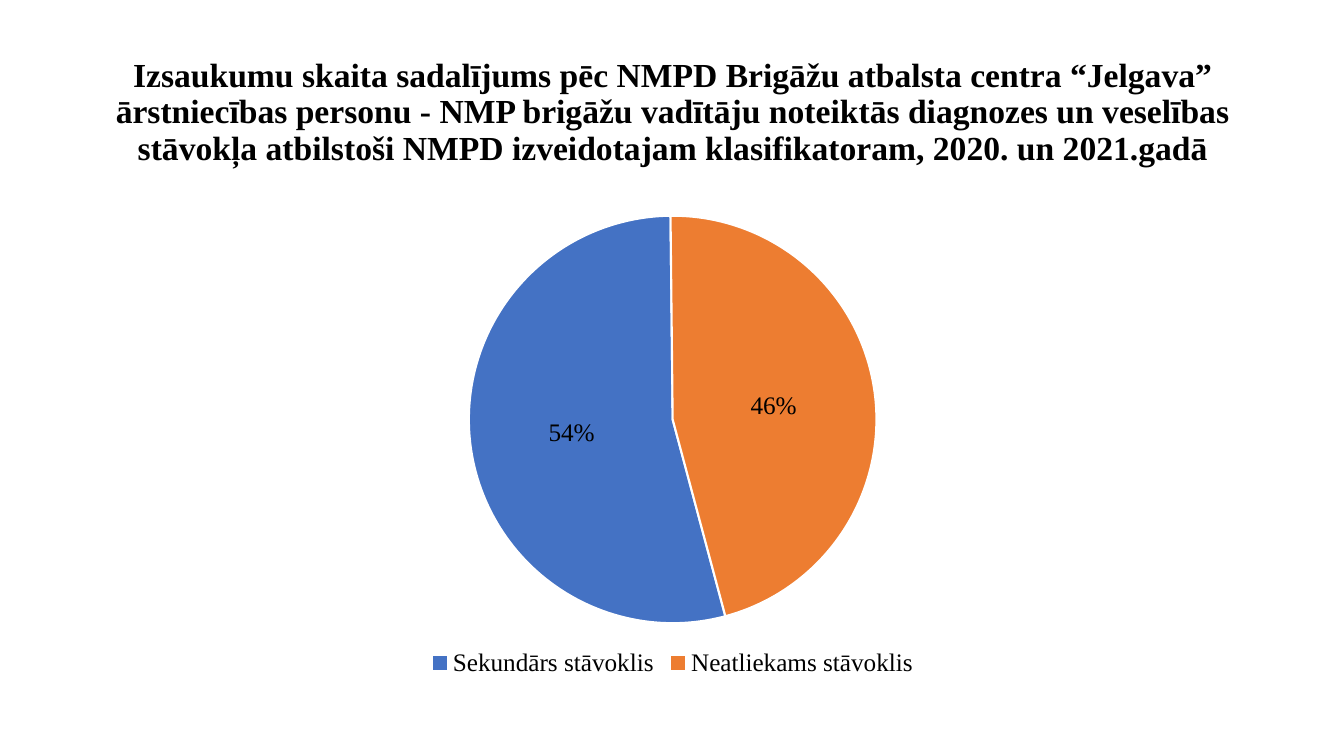
"""Build a slide with a title and a pie chart of emergency calls by condition."""
from dataclasses import dataclass

from pptx import Presentation
from pptx import util as u
from pptx.chart.data import CategoryChartData
from pptx.dml.color import RGBColor
from pptx.enum import chart as charts, text

WIDTH, HEIGHT = u.Inches(13.33), u.Inches(7.5)
COLORS = {"text": "000000", "edge": "FFFFFF", "secondary": "4472C4", "urgent": "ED7D31"}
FONT = {"name": "Times New Roman", "size": u.Pt(18), "bold": False}
TITLE_FONT = FONT | {"size": u.Pt(24), "bold": True}
TITLE = (
    "Izsaukumu skaita sadalījums pēc NMPD Brigāžu atbalsta centra “Jelgava” "
    "ārstniecības personu - NMP brigāžu vadītāju noteiktās diagnozes un veselības "
    "stāvokļa atbilstoši NMPD izveidotajam klasifikatoram, 2020. un 2021.gadā"
)


@dataclass(frozen=True)
class Area:
    """Place on the slide, in shares of its width and height."""

    left: float
    top: float
    width: float
    height: float

    def box(self) -> tuple[int, int, int, int]:
        """Return left, top, width and height in slide units."""
        return (int(self.left * WIDTH), int(self.top * HEIGHT),
                int(self.width * WIDTH), int(self.height * HEIGHT))


@dataclass(frozen=True)
class Slice:
    """One share of the calls."""

    label: str
    percent: int
    color: str


TITLE_AREA = Area(0.069, 0.053, 0.863, 0.193)
CHART_AREA = Area(0.069, 0.267, 0.863, 0.635)
SLICES = [
    Slice("Sekundārs stāvoklis", 54, "secondary"),
    Slice("Neatliekams stāvoklis", 46, "urgent"),
]
FIRST_ANGLE = 165


def apply(target, values: dict) -> None:
    """Set each named attribute of the target."""
    for name, value in values.items():
        setattr(target, name, value)


def style_font(font, values: dict) -> None:
    """Apply font values and the text colour."""
    apply(font, values)
    font.color.rgb = RGBColor.from_string(COLORS["text"])


def add_title(slide) -> None:
    """Add the centred heading."""
    frame = slide.shapes.add_textbox(*TITLE_AREA.box()).text_frame
    apply(frame, {"word_wrap": True, "vertical_anchor": text.MSO_ANCHOR.MIDDLE})
    paragraph = frame.paragraphs[0]
    apply(paragraph, {"alignment": text.PP_ALIGN.CENTER, "line_spacing": 0.9})
    run = paragraph.add_run()
    run.text = TITLE
    style_font(run.font, TITLE_FONT)


def add_pie(slide) -> None:
    """Add the pie chart with percentages and a legend below."""
    data = CategoryChartData(number_format="0")
    data.categories = [part.label for part in SLICES]
    data.add_series("Series 1", [part.percent for part in SLICES])
    chart = slide.shapes.add_chart(
        charts.XL_CHART_TYPE.PIE, *CHART_AREA.box(), data).chart
    apply(chart, {"has_title": False, "has_legend": True})
    apply(chart.legend, {"position": charts.XL_LEGEND_POSITION.BOTTOM,
                         "include_in_layout": False})
    plot = chart.plots[0]
    apply(plot, {"vary_by_categories": True, "has_data_labels": True})
    apply(plot.data_labels, {
        "show_percentage": True, "show_value": False, "number_format": "0%",
        "number_format_is_linked": False,
        "position": charts.XL_LABEL_POSITION.CENTER})
    for owner in (chart, chart.legend, plot.data_labels):
        style_font(owner.font, FONT)
    for index, part in enumerate(SLICES):
        style = plot.series[0].points[index].format
        style.fill.solid()
        style.fill.fore_color.rgb = RGBColor.from_string(COLORS[part.color])
        style.line.color.rgb = RGBColor.from_string(COLORS["edge"])
        style.line.width = u.Pt(1.5)
    pie = chart.element.xpath(".//c:pieChart")[0]
    namespace = pie.tag.removesuffix("pieChart")
    angle = pie.find(f"{namespace}firstSliceAng")
    if angle is None:
        angle = pie.makeelement(f"{namespace}firstSliceAng")
        pie.append(angle)
    angle.set("val", str(FIRST_ANGLE))


def main() -> None:
    """Create and save the presentation."""
    presentation = Presentation()
    apply(presentation, {"slide_width": WIDTH, "slide_height": HEIGHT})
    slide = presentation.slides.add_slide(presentation.slide_layouts[6])
    add_title(slide)
    add_pie(slide)
    presentation.save("out.pptx")


if __name__ == "__main__":
    main()
